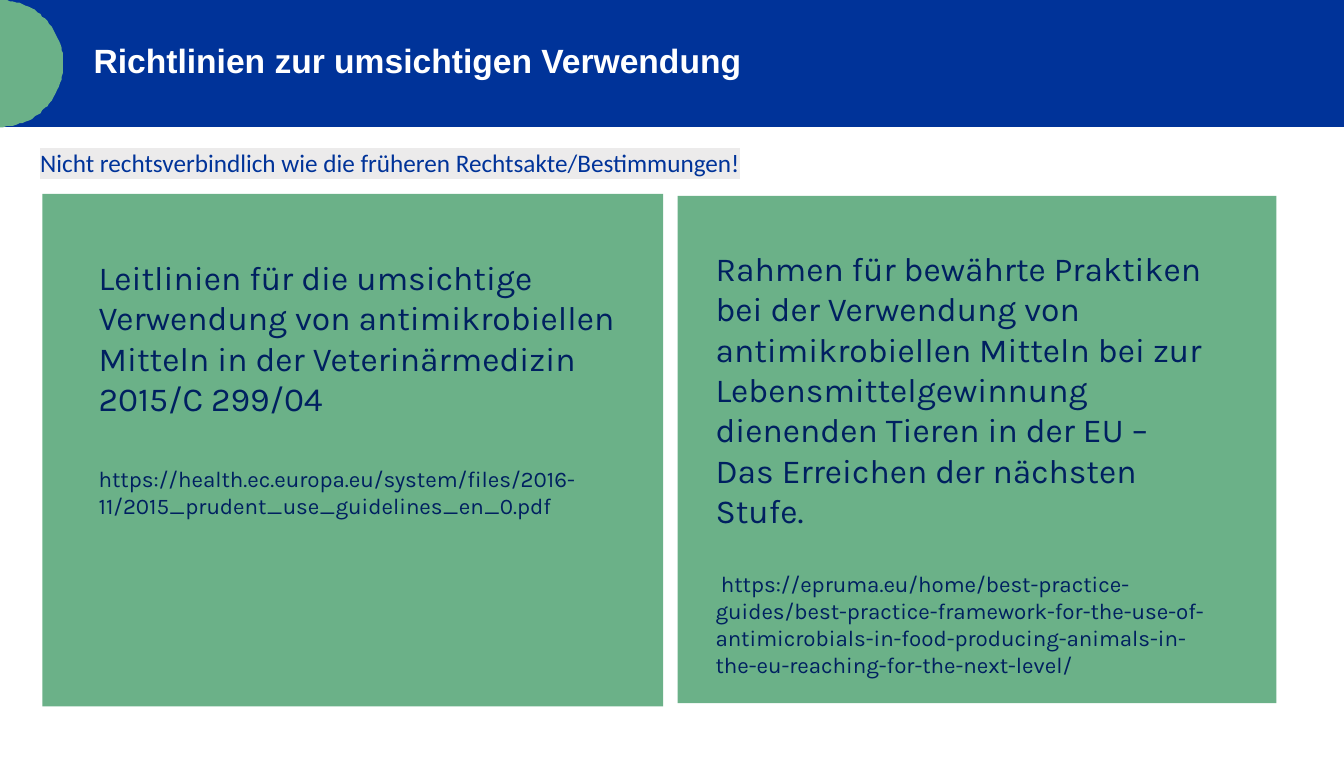
import math
from dataclasses import dataclass

from lxml import etree
from pptx import Presentation
from pptx import util as u
from pptx.dml.color import RGBColor
from pptx.enum import shapes, text
from pptx.oxml.ns import qn
from pptx.shapes.autoshape import Shape
from pptx.slide import Slide


@dataclass(frozen=True)
class Theme:
    blue: str = "003399"
    green: str = "6BB188"
    navy: str = "002060"
    white: str = "FFFFFF"
    marker: str = "ECEBEB"
    heading_font: str = "Arial"
    note_font: str = "Calibri"
    body_font: str = "Karla"
    large: float = 24
    medium: float = 18
    small: float = 16


@dataclass(frozen=True)
class Box:
    left: float
    top: float
    width: float
    height: float

    def lengths(self) -> tuple[u.Length, ...]:
        return tuple(u.Pt(v) for v in (self.left, self.top, self.width, self.height))


@dataclass(frozen=True)
class Line:
    wording: str
    size: float
    space_before: float = 0


@dataclass(frozen=True)
class Guideline:
    panel: Box
    text_area: Box
    title: str
    link: str
    link_gap: float


THEME = Theme()
BANNER_HEIGHT = 90.72
GUIDELINES = (
    Guideline(
        Box(30.24, 138.5, 443.5, 366.1),
        Box(63.36, 180, 390.24, 216),
        "Leitlinien für die umsichtige Verwendung von antimikrobiellen Mitteln "
        "in der Veterinärmedizin 2015/C 299/04",
        "https://health.ec.europa.eu/system/files/2016-11/"
        "2015_prudent_use_guidelines_en_0.pdf",
        33.6,
    ),
    Guideline(
        Box(484, 140, 427.7, 362.2),
        Box(504, 173.5, 365.76, 288.72),
        "Rahmen für bewährte Praktiken bei der Verwendung von antimikrobiellen "
        "Mitteln bei zur Lebensmittelgewinnung dienenden Tieren in der EU – "
        "Das Erreichen der nächsten Stufe.",
        " https://epruma.eu/home/best-practice-guides/"
        "best-practice-framework-for-the-use-of-antimicrobials-in-food-producing-"
        "animals-in-the-eu-reaching-for-the-next-level/",
        28.8,
    ),
)


def paint(shape: Shape, color: str) -> None:
    shape.shadow.inherit = False
    shape.fill.solid()
    shape.fill.fore_color.rgb = RGBColor.from_string(color)
    shape.line.fill.background()


def add_panel(page: Slide, box: Box, color: str) -> None:
    paint(page.shapes.add_shape(shapes.MSO_SHAPE.RECTANGLE, *box.lengths()), color)


def add_half_disc(page: Slide, radius: float, color: str, steps: int = 60) -> None:
    """Draw the right half of a disc against the top left corner of the page."""
    angles = [math.pi * (i / steps - 0.5) for i in range(steps + 1)]
    points = [(radius * math.cos(a), radius * (1 + math.sin(a))) for a in angles]
    builder = page.shapes.build_freeform(*points[0], scale=float(u.Pt(1)))
    builder.add_line_segments(points[1:], close=True)
    paint(builder.convert_to_shape(), color)


def add_text(page: Slide, box: Box, lines: list[Line], font: str, color: str,
             bold: bool = False) -> Shape:
    shape = page.shapes.add_textbox(*box.lengths())
    frame = shape.text_frame
    frame.word_wrap = True
    for index, line in enumerate(lines):
        para = frame.add_paragraph() if index else frame.paragraphs[0]
        para.text = line.wording
        if line.space_before:
            para.space_before = u.Pt(line.space_before)
        para.font.name = font
        para.font.size = u.Pt(line.size)
        para.font.bold = bold
        para.font.color.rgb = RGBColor.from_string(color)
    return shape


def highlight(shape: Shape, color: str) -> None:
    for para in shape.text_frame.paragraphs:
        for span in para.runs:
            marker = etree.SubElement(span.font._element, qn("a:highlight"))
            etree.SubElement(marker, qn("a:srgbClr"), val=color)


def main() -> None:
    deck = Presentation()
    deck.slide_width, deck.slide_height = u.Pt(960), u.Pt(540.72)
    page = deck.slides.add_slide(deck.slide_layouts[6])

    add_panel(page, Box(0, 0, 960, BANNER_HEIGHT), THEME.blue)
    add_half_disc(page, BANNER_HEIGHT / 2, THEME.green)
    title = add_text(page, Box(59.76, 24.48, 761.76, 37.44),
                     [Line("Richtlinien zur umsichtigen Verwendung", THEME.large)],
                     THEME.heading_font, THEME.white, bold=True)
    title.text_frame.vertical_anchor = text.MSO_ANCHOR.MIDDLE

    for guideline in GUIDELINES:
        add_panel(page, guideline.panel, THEME.green)
        lines = [Line(guideline.title, THEME.large),
                 Line(guideline.link, THEME.small, guideline.link_gap)]
        add_text(page, guideline.text_area, lines, THEME.body_font, THEME.navy)

    note = add_text(
        page, Box(21.6, 101.5, 596.9, 28.8),
        [Line("Nicht rechtsverbindlich wie die früheren Rechtsakte/Bestimmungen!",
              THEME.medium)],
        THEME.note_font, THEME.blue)
    highlight(note, THEME.marker)

    deck.save("out.pptx")


if __name__ == "__main__":
    main()
